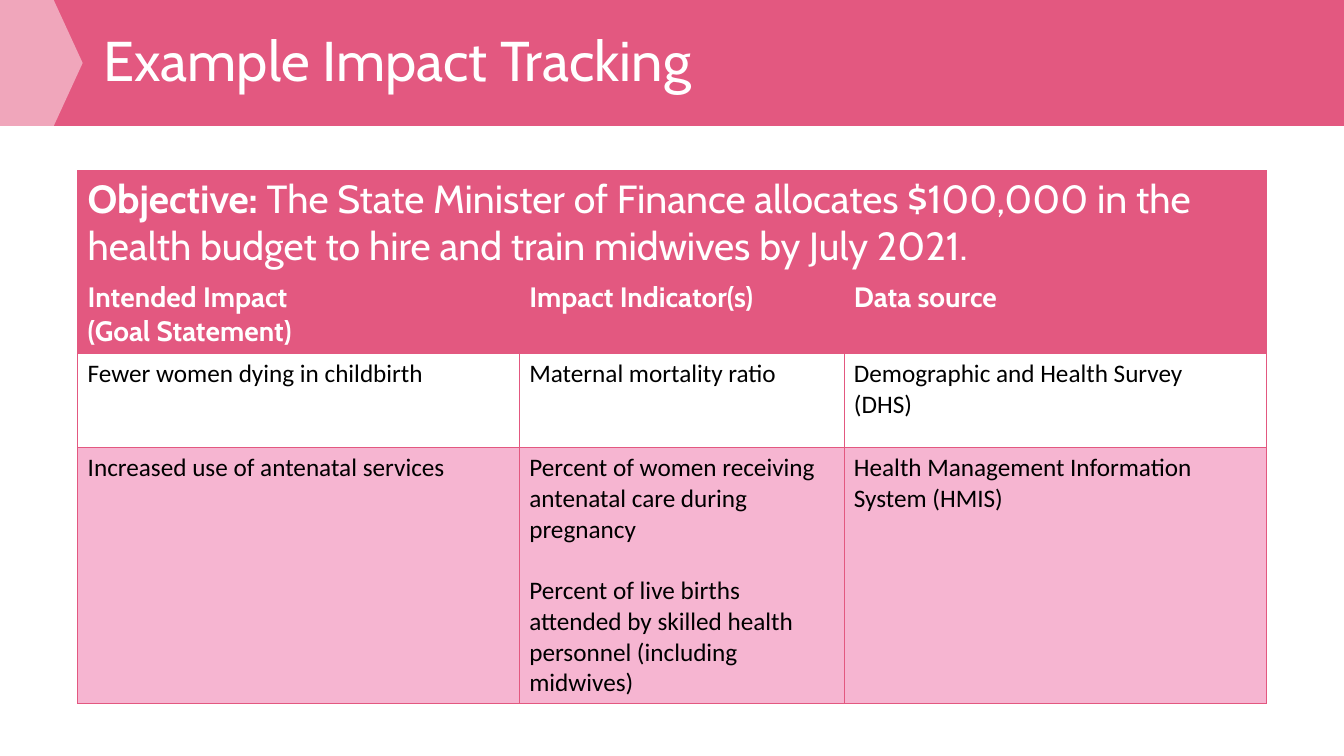
from pptx import Presentation
from pptx.dml.color import RGBColor
from pptx.enum.shapes import MSO_SHAPE
from pptx.enum.text import MSO_ANCHOR
from pptx.oxml import parse_xml
from pptx.oxml.ns import nsdecls, qn
from pptx.util import Inches, Pt
from lxml import etree

RECTANGLE, PENTAGON = MSO_SHAPE.RECTANGLE, MSO_SHAPE.PENTAGON
MIDDLE = MSO_ANCHOR.MIDDLE
PINK, PALE_PINK, WHITE, BLACK = "E35880", "F6B5D1", "FFFFFF", "000000"


def paint(fill, color):
    fill.solid()
    fill.fore_color.rgb = RGBColor.from_string(color)


def write(paragraph, text, style):
    run = paragraph.add_run()
    run.text = text
    for attribute, value in style.items():
        if attribute == "color":
            run.font.color.rgb = RGBColor.from_string(value)
        else:
            setattr(run.font, attribute, value)


title_style = {"name": "Cabin", "size": Pt(40), "color": WHITE}
objective_style = {"name": "Cabin", "size": Pt(28), "color": WHITE, "bold": False}
heading_style = {"name": "Cabin", "size": Pt(20), "color": WHITE, "bold": True}
body_style = {"name": "Calibri", "size": Pt(18), "color": BLACK, "bold": False}

prs = Presentation()
prs.slide_width, prs.slide_height = Inches(13.33), Inches(7.5)
slide = prs.slides.add_slide(prs.slide_layouts[6])

for preset, width, color in [(RECTANGLE, 13.33, PINK), (PENTAGON, 0.82, WHITE)]:
    banner = slide.shapes.add_shape(preset, 0, 0, Inches(width), Inches(1.25))
    banner.shadow.inherit = False
    banner.line.fill.background()
    paint(banner.fill, color)
    if preset == PENTAGON:
        banner.adjustments[0] = 0.35
        tint = banner.fill._xPr.find(qn("a:solidFill"))[0]
        etree.SubElement(tint, qn("a:alpha"), val="47000")

title = slide.shapes.add_textbox(Inches(0.93), Inches(0.2), Inches(10.58), Inches(0.86)).text_frame
title.word_wrap = True
title.vertical_anchor = MIDDLE
title.paragraphs[0].line_spacing = 0.9
write(title.paragraphs[0], "Example Impact Tracking", title_style)

column_widths = [4.38, 3.22, 4.19]
row_heights = [1.04, 0.78, 0.93, 2.54]
impact_rows = [
    (PINK, heading_style, 0, [
        ["Intended Impact", "(Goal Statement)"], ["Impact Indicator(s)"], ["Data source"]]),
    (WHITE, body_style, 0, [
        ["Fewer women dying in childbirth"], ["Maternal mortality ratio"],
        ["Demographic and Health Survey", "(DHS)"]]),
    (PALE_PINK, body_style, 22, [
        ["Increased use of antenatal services"],
        ["Percent of women receiving antenatal care during pregnancy",
         "Percent of live births attended by skilled health personnel (including midwives)"],
        ["Health Management Information System (HMIS)"]]),
]

tracking = slide.shapes.add_table(
    len(row_heights), len(column_widths), Inches(0.77), Inches(1.69),
    Inches(sum(column_widths)), Inches(sum(row_heights))).table
for column, width in zip(tracking.columns, column_widths):
    column.width = Inches(width)
for row, height in zip(tracking.rows, row_heights):
    row.height = Inches(height)

objective = tracking.cell(0, 0)
objective.merge(tracking.cell(0, 2))
objective_line = objective.text_frame.paragraphs[0]
write(objective_line, "Objective: ", objective_style | {"bold": True})
write(objective_line, "The State Minister of Finance allocates $100,000 in the health budget "
      "to hire and train midwives by July 2021.", objective_style)

for row_index, (color, style, gap, entries) in enumerate(impact_rows, start=1):
    for column_index, lines in enumerate(entries):
        frame = tracking.cell(row_index, column_index).text_frame
        for line_index, line in enumerate(lines):
            paragraph = frame.add_paragraph() if line_index else frame.paragraphs[0]
            if line_index and gap:
                paragraph.space_before = Pt(gap)
            write(paragraph, line, style)

row_fills = [PINK] + [color for color, *_ in impact_rows]
for row, color in zip(tracking.rows, row_fills):
    for cell in row.cells:
        properties = cell._tc.get_or_add_tcPr()
        for side in ("lnL", "lnR", "lnT", "lnB"):
            properties.append(parse_xml(
                f'<a:{side} {nsdecls("a")} w="6350"><a:solidFill>'
                f'<a:srgbClr val="{PINK}"/></a:solidFill></a:{side}>'))
        paint(cell.fill, color)

prs.save("out.pptx")
